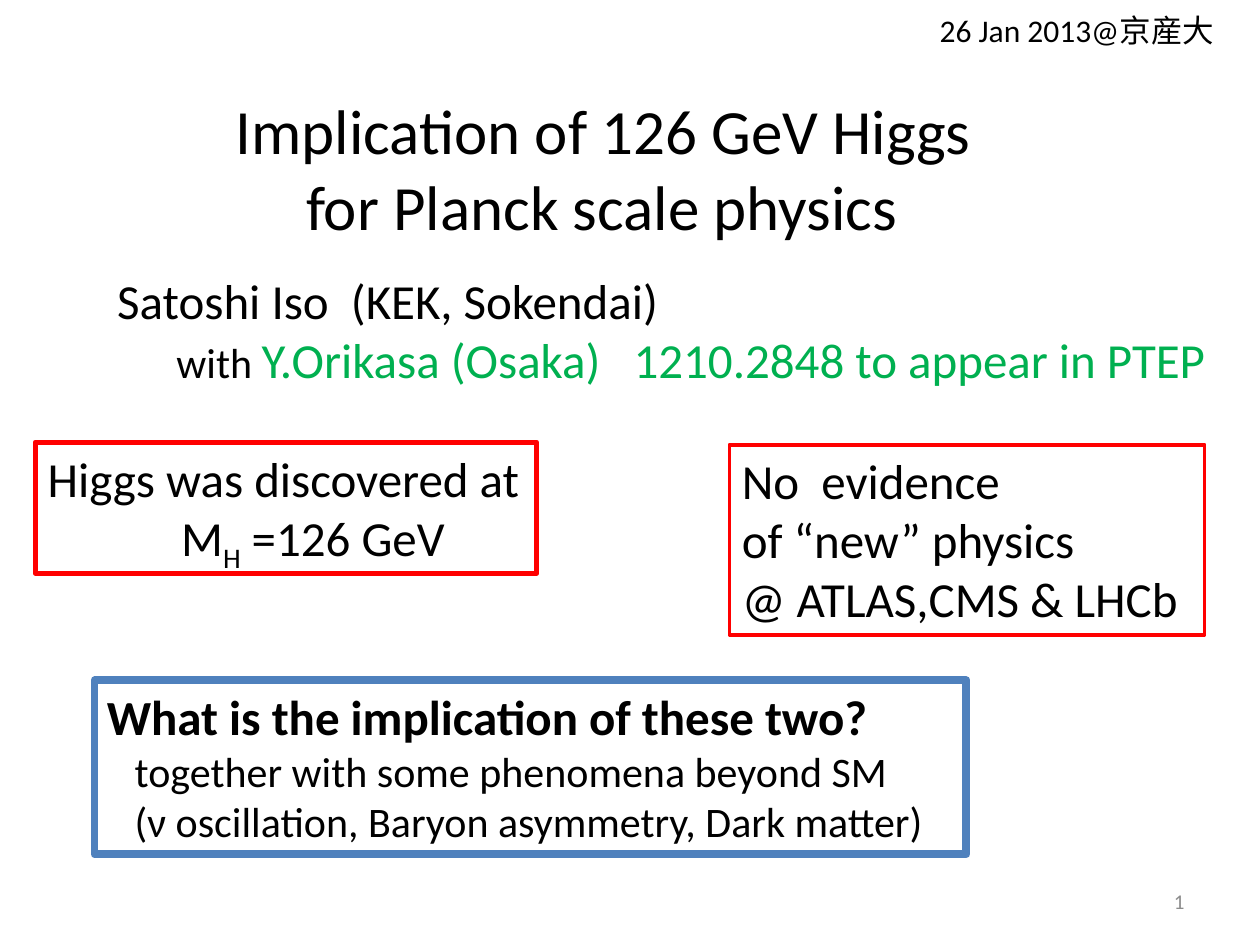
import pptx
import pptx.dml.color
import pptx.enum.text
import pptx.oxml
import pptx.oxml.ns
import pptx.util
from pptx.util import Inches

HUES = {"ink": "000000", "green": "00B050", "red": "FF0000",
        "blue": "4F81BD", "gray": "8C8C8C"}
FACE = "Calibri"
ALIGN = pptx.enum.text.PP_ALIGN
ANCHOR = pptx.enum.text.MSO_ANCHOR


def hue(name):
    return pptx.dml.color.RGBColor.from_string(HUES[name])


def style(font, size, tint="ink", bold=False):
    font.name = FACE
    font.size = pptx.util.Pt(size)
    font.bold = bold
    font.color.rgb = hue(tint)


def place(shape, left, top, width, height):
    shape.left, shape.top = Inches(left), Inches(top)
    shape.width, shape.height = Inches(width), Inches(height)


def setup(frame, wrap=False, anchor=ANCHOR.TOP):
    frame.word_wrap = wrap
    frame.auto_size = pptx.enum.text.MSO_AUTO_SIZE.NONE
    frame.vertical_anchor = anchor


def add_line(frame, first, text, size, tint="ink", indent=0, bold=False):
    """Add one plain, unbulleted paragraph with a left indent."""
    para = frame.paragraphs[0] if first else frame.add_paragraph()
    props = para._p.get_or_add_pPr()
    props.set("marL", str(Inches(indent)))
    props.set("indent", "0")
    pptx.oxml.ns.qn("a:buNone")
    props.append(props.makeelement(pptx.oxml.ns.qn("a:buNone"), {}))
    para.alignment = ALIGN.LEFT
    para.space_before = pptx.util.Pt(0)
    style(para.font, size, tint, bold)
    if text:
        para.add_run().text = text
    return para


def fill_text(frame, lines):
    """Each line is (text, size, indent, bold)."""
    for i, (text, size, indent, bold) in enumerate(lines):
        para = add_line(frame, i == 0, text, size, indent=indent, bold=bold)
    return para


def add_text(slide, spot, wrap=False, anchor=ANCHOR.TOP):
    box = slide.shapes.add_textbox(*map(Inches, spot))
    setup(box.text_frame, wrap, anchor)
    return box


def add_frame(slide, spot, tint, weight, lines):
    """Add an outlined text box and return its last paragraph."""
    box = add_text(slide, spot)
    box.line.color.rgb = hue(tint)
    box.line.width = pptx.util.Pt(weight)
    return fill_text(box.text_frame, lines)


def add_number(slide, spot):
    frame = add_text(slide, spot, True, ANCHOR.MIDDLE).text_frame
    para = add_line(frame, True, "", 12, "gray")
    para.alignment = ALIGN.RIGHT
    run = para.add_run()
    run.text = "1"
    style(run.font, 12, "gray")
    # Turn the run into a slide number field
    field = run._r.makeelement(pptx.oxml.ns.qn("a:fld"), {
        "id": "{B6F15528-21DE-4FAA-801E-634DDDAF4B2B}", "type": "slidenum"})
    run._r.addprevious(field)
    for part in list(run._r):
        field.append(part)
    para._p.remove(run._r)


def main():
    deck = pptx.Presentation()
    deck.slide_width, deck.slide_height = Inches(10), Inches(7.5)
    slide = deck.slides.add_slide(deck.slide_layouts[1])

    # Title
    title = slide.shapes.title
    place(title, 1.77, 0.68, 6.21, 1.31)
    setup(title.text_frame)
    fill_text(title.text_frame, [
        ("Implication of 126 GeV Higgs", 36, 0, False),
        ("for Planck scale physics", 36, 0.56, False)])

    # Authors
    body = slide.placeholders[1]
    place(body, 0.83, 2.1, 8.9, 1.04)
    setup(body.text_frame)
    last = fill_text(body.text_frame, [
        ("Satoshi Iso  (KEK, Sokendai)", 28, 0, False),
        ("", 28, 0.47, False)])
    for text, size, tint in (
            ("with ", 24, "ink"),
            ("Y.Orikasa (Osaka)   1210.2848 to appear in PTEP", 28, "green")):
        run = last.add_run()
        run.text = text
        style(run.font, size, tint)

    # Date and place
    date = add_text(slide, (7.36, 0.04, 2.4, 0.4), wrap=True)
    add_line(date.text_frame, True, "26 Jan 2013@京産大", 18)

    # Two findings
    mass = add_frame(slide, (0.28, 3.51, 3.98, 1.04), "red", 3, [
        ("Higgs was discovered at", 28, 0, False),
        ("M", 28, 1.06, False)])
    low = mass.add_run()
    low.text = "H"
    low.font._element.set("baseline", "-25000")
    mass.add_run().text = " =126 GeV"
    add_frame(slide, (5.79, 3.53, 3.77, 1.51), "red", 2.25, [
        ("No  evidence", 28, 0, False),
        ("of “new” physics", 28, 0, False),
        ("@ ATLAS,CMS & LHCb", 28, 0, False)])

    # Question
    add_frame(slide, (0.75, 5.4, 6.92, 1.38), "blue", 4.5, [
        ("What is the implication of these two?", 28, 0, True),
        ("together with some phenomena beyond SM", 24, 0.22, False),
        ("(ν oscillation, Baryon asymmetry, Dark matter)", 24, 0.22, False)])

    add_number(slide, (7.17, 6.95, 2.33, 0.4))
    deck.save("out.pptx")


if __name__ == "__main__":
    main()
